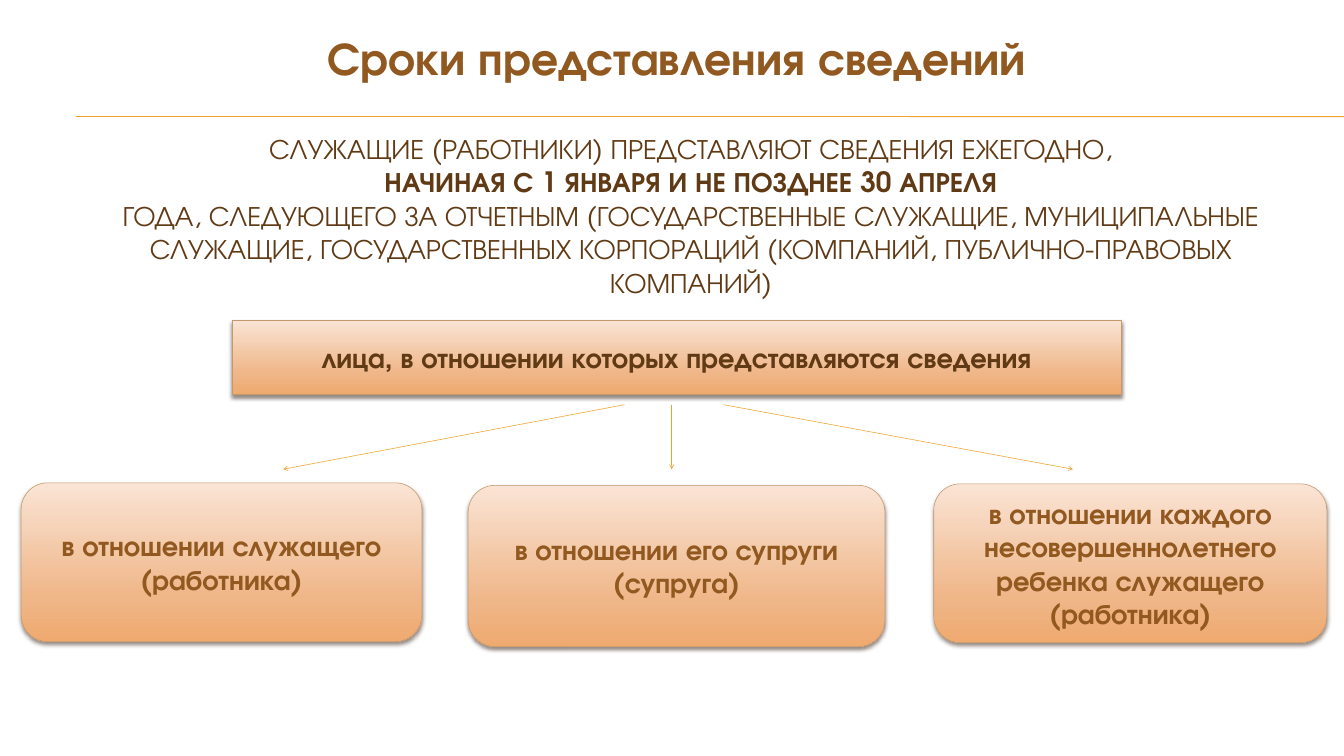
"""Build the slide on the deadlines for submitting declarations."""
from copy import deepcopy

from lxml.etree import SubElement
from pptx import Presentation
from pptx.dml.color import RGBColor
from pptx.enum.shapes import MSO_CONNECTOR, MSO_SHAPE
from pptx.enum.text import MSO_ANCHOR, MSO_AUTO_SIZE, PP_ALIGN
from pptx.oxml.ns import qn
from pptx.util import Pt

PX = 9144
ORANGE = RGBColor(0xF0, 0xA2, 0x2E)
BROWN = RGBColor(0x91, 0x58, 0x1F)
DARK_BROWN = RGBColor(0x60, 0x3A, 0x14)
OUTLINE = RGBColor(0xC3, 0x98, 0x6D)
SHADOW = RGBColor(0x4E, 0x3B, 0x30)
GRADIENT = [
    (0, RGBColor(0xFA, 0xE4, 0xD5)),
    (0.72, RGBColor(0xEF, 0xB6, 0x88)),
    (1, RGBColor(0xEF, 0xAA, 0x6F)),
]


def write_text(shape, lines, size, color):
    frame = shape.text_frame
    frame.word_wrap = True
    para = frame.paragraphs[0]
    para.alignment = PP_ALIGN.CENTER
    for index, (text, bold) in enumerate(lines):
        if index:
            para.add_line_break()
        span = para.add_run()
        span.text = text
        font_format = {"name": "TeX Gyre Adventor", "size": Pt(size), "bold": bold}
        for name, value in font_format.items():
            setattr(span.font, name, value)
        span.font.color.rgb = color


def add_line(page, ends, width, arrow=False):
    connector = page.shapes.add_connector(MSO_CONNECTOR.STRAIGHT, *[value * PX for value in ends])
    connector.line.color.rgb = ORANGE
    connector.line.width = Pt(width)
    properties = connector.element.spPr
    if arrow:
        SubElement(properties.find(qn("a:ln")), qn("a:tailEnd"), type="arrow")
    SubElement(properties, qn("a:effectLst"))


deck = Presentation()
deck.slide_width = 2667 * PX
deck.slide_height = 1500 * PX
page = deck.slides.add_slide(deck.slide_layouts[5])

for ends in [(150, 230, 2667, 230), (150, 231, 2667, 232)]:
    add_line(page, ends, 0.75)

heading = page.shapes.add_textbox(138 * PX, 54 * PX, 2410 * PX, 121 * PX)
write_text(heading, [("Сроки представления сведений", True)], 66, BROWN)

title = page.shapes.title
for name, value in {"left": 111, "top": 246, "width": 2520, "height": 362}.items():
    setattr(title, name, value * PX)
title_format = {
    "margin_left": 24 * PX,
    "margin_right": 24 * PX,
    "margin_top": 12 * PX,
    "margin_bottom": 12 * PX,
    "vertical_anchor": MSO_ANCHOR.MIDDLE,
    "auto_size": MSO_AUTO_SIZE.NONE,
}
for name, value in title_format.items():
    setattr(title.text_frame, name, value)
title_lines = [
    ("СЛУЖАЩИЕ (РАБОТНИКИ) ПРЕДСТАВЛЯЮТ СВЕДЕНИЯ ЕЖЕГОДНО,", False),
    ("НАЧИНАЯ С 1 ЯНВАРЯ И НЕ ПОЗДНЕЕ 30 АПРЕЛЯ", True),
    (
        "ГОДА, СЛЕДУЮЩЕГО ЗА ОТЧЕТНЫМ (ГОСУДАРСТВЕННЫЕ СЛУЖАЩИЕ, МУНИЦИПАЛЬНЫЕ "
        "СЛУЖАЩИЕ, ГОСУДАРСТВЕННЫХ КОРПОРАЦИЙ (КОМПАНИЙ, ПУБЛИЧНО-ПРАВОВЫХ КОМПАНИЙ)",
        False,
    ),
]
write_text(title, title_lines, 40, DARK_BROWN)

ROUNDED = MSO_SHAPE.ROUNDED_RECTANGLE
boxes = [
    (ROUNDED, (42, 958, 795, 315), "в отношении служащего (работника)", BROWN),
    (ROUNDED, (929, 963, 827, 320), "в отношении его супруги (супруга)", BROWN),
    (
        ROUNDED,
        (1853, 960, 780, 315),
        "в отношении каждого несовершеннолетнего ребенка служащего (работника)",
        BROWN,
    ),
    (
        MSO_SHAPE.RECTANGLE,
        (460, 635, 1765, 147),
        "лица, в отношении которых представляются сведения",
        DARK_BROWN,
    ),
]
for kind, place, text, color in boxes:
    box = page.shapes.add_shape(kind, *[value * PX for value in place])
    box.fill.gradient()
    box.fill.gradient_angle = 270
    properties = box.element.spPr
    stop_list = properties.find(qn("a:gradFill")).find(qn("a:gsLst"))
    stop_list.append(deepcopy(stop_list[0]))
    for stop, (position, stop_color) in zip(box.fill.gradient_stops, GRADIENT):
        stop.position = position
        stop.color.rgb = stop_color
    box.line.color.rgb = OUTLINE
    box.line.width = Pt(0.79)
    box.shadow.inherit = False
    shadow = SubElement(
        properties.find(qn("a:effectLst")),
        qn("a:outerShdw"),
        blurRad=str(Pt(6)),
        dist=str(Pt(4)),
        dir="5400000",
        rotWithShape="0",
    )
    shadow_color = SubElement(shadow, qn("a:srgbClr"), val=str(SHADOW))
    SubElement(shadow_color, qn("a:alpha"), val="60000")
    box.text_frame.vertical_anchor = MSO_ANCHOR.MIDDLE
    write_text(box, [(text, True)], 40, color)

for start, end in [(1333, 1333), (1239, 562), (1436, 2129)]:
    add_line(page, (start, 803, end, 931), 0.79, arrow=True)

deck.save("out.pptx")
